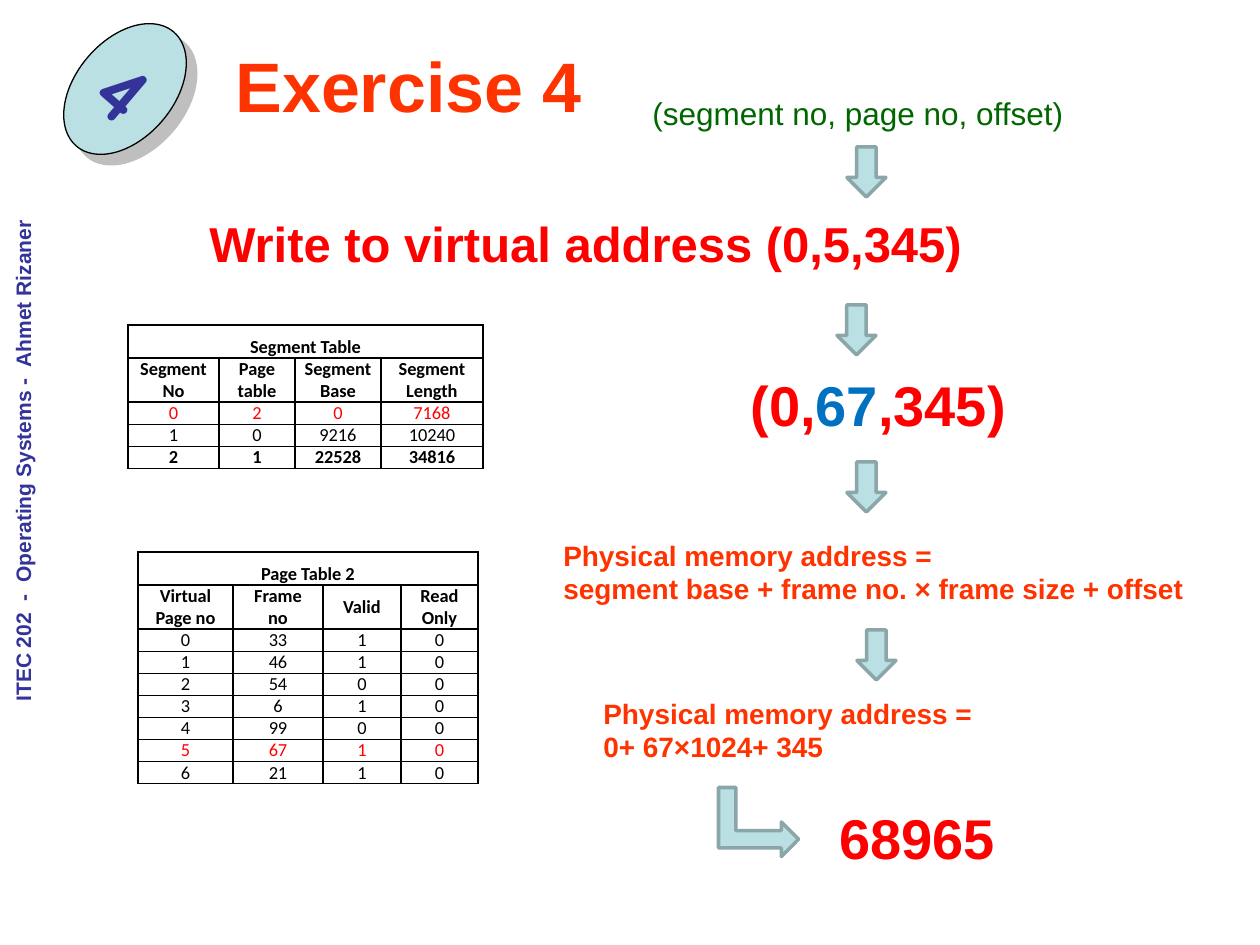
from lxml.etree import SubElement
from pptx import Presentation
from pptx.dml.color import RGBColor
from pptx.enum.shapes import MSO_SHAPE as Shape
from pptx.enum.text import MSO_ANCHOR as Anchor, PP_ALIGN as Align
from pptx.oxml import parse_xml
from pptx.oxml.ns import nsdecls, qn
from pptx.util import Pt

PX = 914400 / 126
COLORS = {
    "navy": "333399", "orange": "FF3300", "red": "FF0000", "green": "006600",
    "blue": "0070C0", "black": "000000", "aqua": "BBE0E3", "steel": "8AA6A8",
}


def px(*lengths):
    return [round(length * PX) for length in lengths]


def write_text(frame, text, size, color, bold=True, font="Arial", align=Align.LEFT,
               anchor=Anchor.TOP, wrap=True, spacing=None, accent="", accent_color=None):
    frame.word_wrap = wrap
    frame.vertical_anchor = anchor
    for index, line in enumerate(text.split("\n")):
        paragraph = frame.add_paragraph() if index else frame.paragraphs[0]
        paragraph.alignment = align
        if spacing:
            paragraph.line_spacing = spacing
        for part in line.partition(accent) if accent else [line]:
            run = paragraph.add_run()
            run.text = part
            run.font.name = font
            run.font.size = Pt(size)
            run.font.bold = bold
            run_color = accent_color if part == accent else color
            run.font.color.rgb = RGBColor.from_string(COLORS[run_color])


presentation = Presentation()
presentation.slide_width, presentation.slide_height = px(1260, 945)
slide = presentation.slides.add_slide(presentation.slide_layouts[6])

# Course name along the left edge
course = slide.shapes.add_textbox(*px(-392, 442, 830, 38))
course.rotation = 270
write_text(course.text_frame, "ITEC 202  -  Operating Systems -  Ahmet Rizaner",
           12, "navy", align=Align.CENTER)

# Title
title = slide.shapes.add_textbox(*px(108, 49, 601, 71))
write_text(title.text_frame, "Exercise 4", 40, "orange", align=Align.CENTER,
           anchor=Anchor.MIDDLE)

# Numbered badge with an offset shadow
badge = slide.shapes.add_shape(Shape.OVAL, *px(76, 14, 98, 150))
badge.rotation = 40.4
badge.fill.solid()
badge.fill.fore_color.rgb = RGBColor.from_string(COLORS["aqua"])
badge.line.color.rgb = RGBColor.from_string(COLORS["black"])
badge.line.width = Pt(0.75)
badge._element.spPr.append(parse_xml(
    f'<a:effectLst {nsdecls("a")}><a:outerShdw dist="107950" dir="2700000" '
    'algn="ctr" rotWithShape="0"><a:srgbClr val="808080"><a:alpha val="50000"/>'
    '</a:srgbClr></a:outerShdw></a:effectLst>'))
write_text(badge.text_frame, "4", 48, "navy", font="Comic Neue", align=Align.CENTER,
           anchor=Anchor.MIDDLE, wrap=False)

# Steps of the address translation
steps = [
    ((640, 88, 457, 50), "(segment no, page no, offset)", 18, "green",
     {"bold": False, "wrap": False}),
    ((197, 207, 788, 72), "Write to virtual address (0,5,345)", 28, "red", {"wrap": False}),
    ((738, 364, 286, 81), "(0,67,345)", 32, "red", {"accent": "67", "accent_color": "blue"}),
    ((551, 532, 669, 81), "Physical memory address =\n"
     "segment base + frame no. × frame size + offset", 16, "orange", {}),
    ((591, 690, 452, 81), "Physical memory address =\n0+ 67×1024+ 345", 16, "orange", {}),
    ((827, 797, 197, 81), "68965", 32, "red", {}),
]
for box, text, size, color, options in steps:
    step = slide.shapes.add_textbox(*px(*box))
    write_text(step.text_frame, text, size, color, **options)

# Arrows between the steps
arrows = [(Shape.DOWN_ARROW, left, top, 39, 50, 0)
          for left, top in [(847, 147), (837, 305), (847, 462), (857, 630)]]
arrows.append((Shape.BENT_UP_ARROW, 724, 782, 69, 80, 90))
for kind, left, top, width, height, rotation in arrows:
    arrow = slide.shapes.add_shape(kind, *px(left, top, width, height))
    arrow.rotation = rotation
    arrow.shadow.inherit = False
    arrow.fill.solid()
    arrow.fill.fore_color.rgb = RGBColor.from_string(COLORS["aqua"])
    arrow.line.color.rgb = RGBColor.from_string(COLORS["steel"])
    arrow.line.width = Pt(2)

# Tables: position, column widths, header anchor, red row, bold rows, cell text
tables = [
    (128, 325, (91, 76, 86, 102), Anchor.TOP, 2, (0, 1, 4), [
        ["Segment Table", "", "", ""],
        ["Segment\nNo", "Page table", "Segment\nBase", "Segment\nLength"],
        ["0", "2", "0", "7168"],
        ["1", "0", "9216", "10240"],
        ["2", "1", "22528", "34816"],
    ]),
    (138, 552, (95, 90, 78, 77), Anchor.MIDDLE, 7, (0, 1), [
        ["Page Table 2", "", "", ""],
        ["Virtual\nPage no", "Frame\nno", "Valid", "Read\nOnly"],
        ["0", "33", "1", "0"],
        ["1", "46", "1", "0"],
        ["2", "54", "0", "0"],
        ["3", "6", "1", "0"],
        ["4", "99", "0", "0"],
        ["5", "67", "1", "0"],
        ["6", "21", "1", "0"],
    ]),
]
for left, top, widths, header_anchor, red_row, bold_rows, rows in tables:
    heights = [33, 44] + [22] * (len(rows) - 2)
    table = slide.shapes.add_table(len(rows), len(widths), *px(
        left, top, sum(widths), sum(heights))).table
    table.first_row = table.horz_banding = False
    for column, width in zip(table.columns, px(*widths)):
        column.width = width
    for row, height in zip(table.rows, px(*heights)):
        row.height = height
    table.cell(0, 0).merge(table.cell(0, len(widths) - 1))
    for row_index, texts in enumerate(rows):
        for column_index, text in enumerate(texts):
            cell = table.cell(row_index, column_index)
            cell.margin_left, cell.margin_right = px(9, 9)
            cell.margin_top = cell.margin_bottom = 0
            cell_properties = cell._tc.get_or_add_tcPr()
            for side in ("lnL", "lnR", "lnT", "lnB"):
                border = SubElement(cell_properties, qn(f"a:{side}"), w=str(Pt(1)))
                border_fill = SubElement(border, qn("a:solidFill"))
                SubElement(border_fill, qn("a:srgbClr"), val=COLORS["black"])
            cell.fill.background()
            if text:
                write_text(cell.text_frame, text, 10.5,
                           "red" if row_index == red_row else "black",
                           bold=row_index in bold_rows, font="Calibri", align=Align.CENTER,
                           spacing=None if row_index else 1.5)
                cell.vertical_anchor = header_anchor if row_index == 1 else Anchor.TOP

presentation.save("out.pptx")
